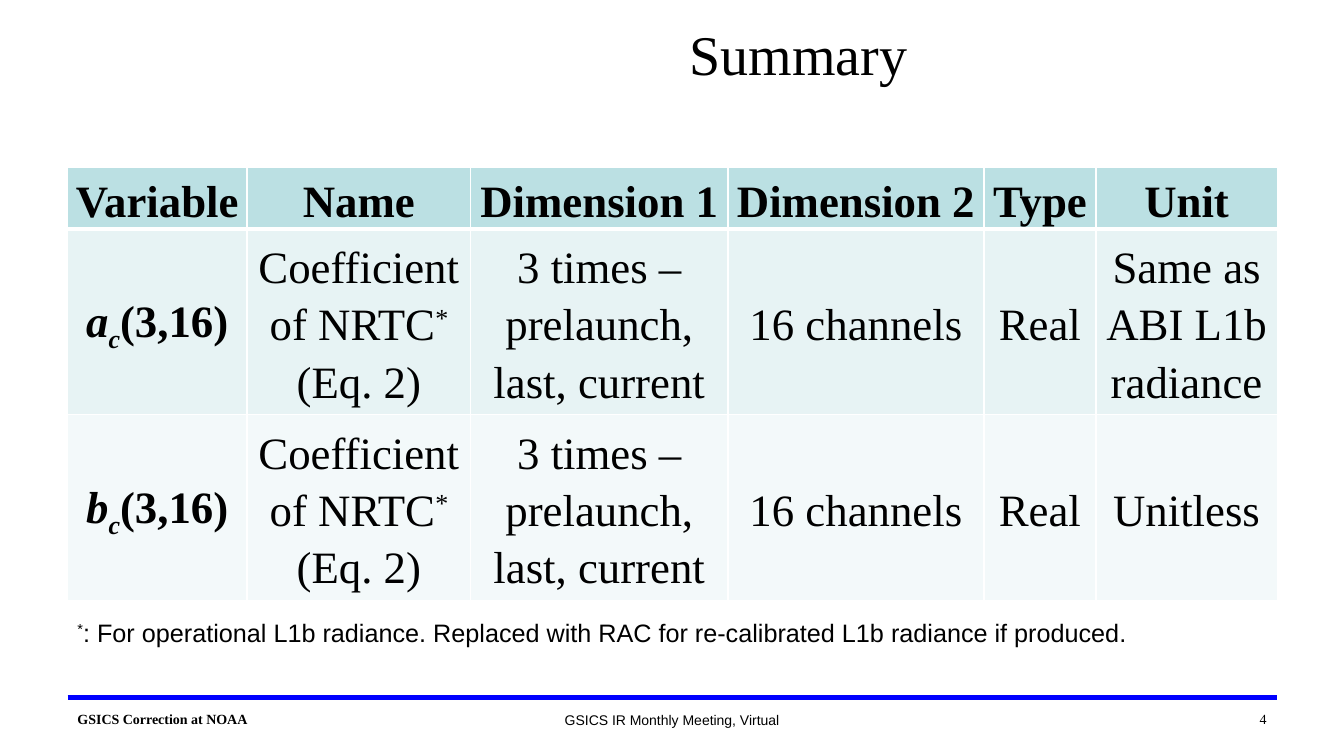
"""Build the summary slide of the correction coefficient variables."""
import lxml.etree
import pptx
import pptx.dml.color
import pptx.enum.shapes
import pptx.enum.text
import pptx.oxml.ns
import pptx.util

PX = 9144
BLACK = pptx.dml.color.RGBColor(0x00, 0x00, 0x00)
WHITE = pptx.dml.color.RGBColor(0xFF, 0xFF, 0xFF)
BLUE = pptx.dml.color.RGBColor(0x00, 0x00, 0xFF)
ROW_FILLS = [
    pptx.dml.color.RGBColor(0xBB, 0xE0, 0xE3),
    pptx.dml.color.RGBColor(0xE7, 0xF3, 0xF4),
    pptx.dml.color.RGBColor(0xF3, 0xF9, 0xFA),
]
SERIF = "Times New Roman"
SANS = "Arial"
ALIGN = pptx.enum.text.PP_ALIGN
ANCHOR = pptx.enum.text.MSO_ANCHOR

COLUMN_WIDTHS = [178, 222, 255, 254, 111, 180]
ROW_HEIGHT = 41
TABLE_HEIGHT = 418
HEADINGS = ["Variable", "Name", "Dimension 1", "Dimension 2", "Type", "Unit"]
COEFFICIENTS = [("a", "Same as ABI L1b radiance"), ("b", "Unitless")]


def px(length):
    """Turn px into EMU."""
    return pptx.util.Emu(length * PX)


def place(shape, left, top, width, height):
    """Move and size a shape."""
    shape.left, shape.top = px(left), px(top)
    shape.width, shape.height = px(width), px(height)


def write(paragraph, content, size, face, align, bold=False):
    """Fill a paragraph with a string or with (text, baseline, italic) parts."""
    parts = [(content, 0, False)] if isinstance(content, str) else content
    paragraph.alignment = align
    font = paragraph.font
    font.size, font.name, font.bold = pptx.util.Pt(size), face, bold
    font.color.rgb = BLACK
    for text, baseline, italic in parts:
        run = paragraph.add_run()
        run.text = text
        if italic:
            run.font.italic = True
        if baseline:
            run.font._element.set("baseline", str(baseline * 1000))


def add_label(slide, box, content, size, face, align=ALIGN.LEFT, bold=False):
    """Add a wrapped text box."""
    frame = slide.shapes.add_textbox(*map(px, box)).text_frame
    frame.word_wrap = True
    frame.vertical_anchor = ANCHOR.MIDDLE
    write(frame.paragraphs[0], content, size, face, align, bold)


def add_rule(slide, left, right, y):
    """Add the footer line."""
    rule = slide.shapes.add_connector(
        pptx.enum.shapes.MSO_CONNECTOR.STRAIGHT, px(left), px(y), px(right), px(y))
    rule.line.color.rgb = BLUE
    rule.line.width = pptx.util.Pt(3)
    lxml.etree.SubElement(rule._element.spPr, pptx.oxml.ns.qn("a:effectLst"))


def set_borders(cell, widths):
    """Draw white cell borders, with widths in points by side."""
    properties = cell._tc.get_or_add_tcPr()
    for side, width in widths.items():
        border = lxml.etree.SubElement(
            properties, pptx.oxml.ns.qn(f"a:ln{side}"), w=str(pptx.util.Pt(width)))
        fill = lxml.etree.SubElement(border, pptx.oxml.ns.qn("a:solidFill"))
        lxml.etree.SubElement(fill, pptx.oxml.ns.qn("a:srgbClr"), val=str(WHITE))


def style_cell(cell, content, row, bold):
    """Fill one cell with its text, borders and colour."""
    cell.margin_left = cell.margin_right = px(7)
    cell.margin_top = cell.margin_bottom = 0
    cell.vertical_anchor = ANCHOR.MIDDLE
    set_borders(cell, {"L": 1, "R": 1, "T": 3 if row == 1 else 1, "B": 3 if row == 0 else 1})
    cell.fill.solid()
    cell.fill.fore_color.rgb = ROW_FILLS[row]
    paragraph = cell.text_frame.paragraphs[0]
    paragraph.line_spacing = 1.15
    write(paragraph, content, 32, SERIF, ALIGN.CENTER, bold)


def coefficient_row(letter, unit):
    """Return the cell contents for one coefficient."""
    return [
        [(letter, 0, True), ("c", -25, True), ("(3,16)", 0, False)],
        [("Coefficient of NRTC", 0, False), ("*", 30, False), (" (Eq. 2)", 0, False)],
        "3 times – prelaunch, last, current",
        "16 channels",
        "Real",
        unit,
    ]


def add_variable_table(slide, left, top):
    """Add the table of variables."""
    rows = [HEADINGS] + [coefficient_row(*item) for item in COEFFICIENTS]
    holder = slide.shapes.add_table(
        len(rows), len(HEADINGS), px(left), px(top),
        px(sum(COLUMN_WIDTHS)), px(ROW_HEIGHT * len(rows)))
    table = holder.table
    table.first_row = table.horz_banding = False
    for column, width in zip(table.columns, COLUMN_WIDTHS):
        column.width = px(width)
    for row, contents in enumerate(rows):
        for column, content in enumerate(contents):
            style_cell(table.cell(row, column), content, row, row == 0 or column == 0)
    holder.height = px(TABLE_HEIGHT)


def set_title(slide, text):
    """Write the title placeholder."""
    title = slide.shapes.title
    place(title, 367, 15, 850, 73)
    title.text_frame.vertical_anchor = ANCHOR.BOTTOM
    title.text_frame.margin_bottom = px(2)
    write(title.text_frame.paragraphs[0], text, 40, SERIF, ALIGN.CENTER)


def main():
    """Build and save the slide."""
    deck = pptx.Presentation()
    deck.slide_width, deck.slide_height = px(1333), px(750)
    slide = deck.slides.add_slide(deck.slide_layouts[5])
    add_label(slide, (366, 702, 601, 25), "GSICS IR Monthly Meeting, Virtual",
              10, SANS, ALIGN.CENTER)
    add_rule(slide, 67, 1267, 692)
    add_label(slide, (67, 701, 301, 25), "GSICS Correction at NOAA", 10, SERIF, bold=True)
    set_title(slide, "Summary")
    add_variable_table(slide, 67, 166)
    add_label(slide, (1067, 701, 199, 25), "4", 10, SERIF, ALIGN.RIGHT)
    footnote = ": For operational L1b radiance. Replaced with RAC for re-calibrated L1b radiance if produced."
    add_label(slide, (67, 607, 1200, 40), [("*", 30, False), (footnote, 0, False)], 18, SANS)
    deck.save("out.pptx")


if __name__ == "__main__":
    main()
